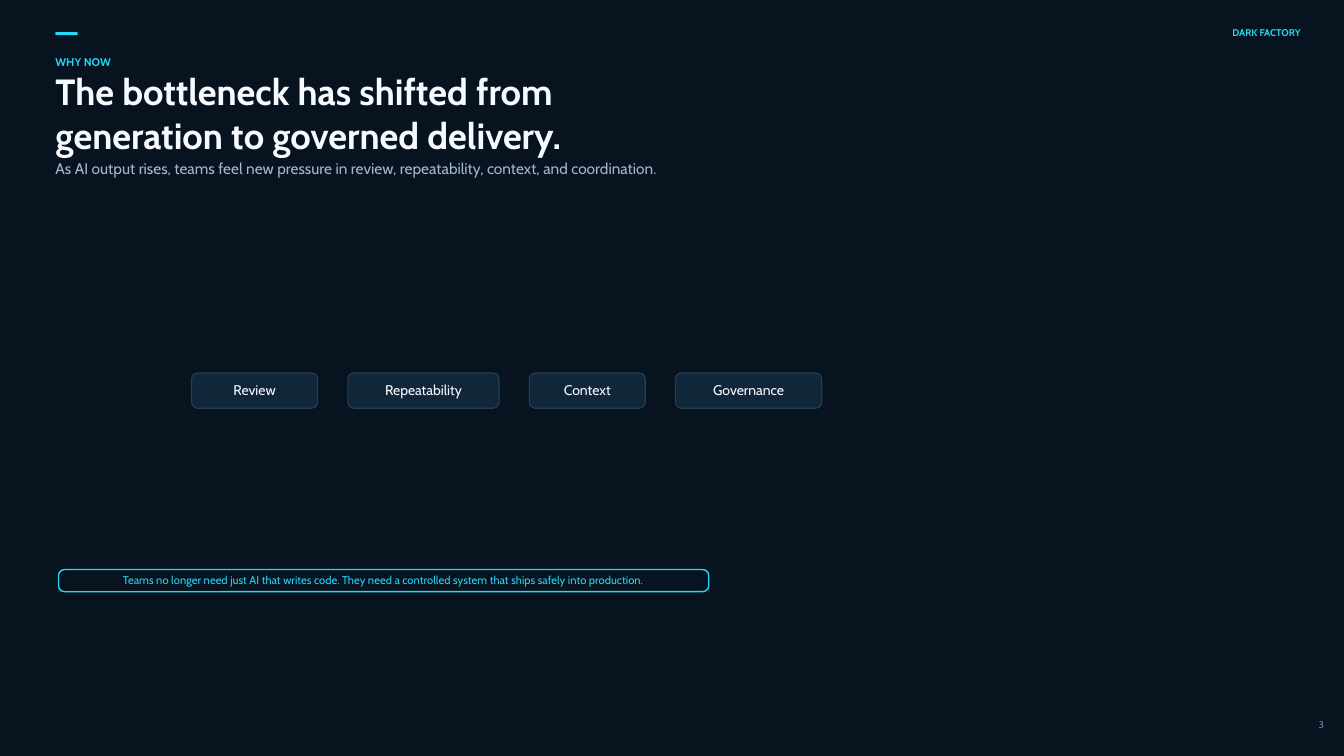
from pptx import Presentation
from pptx.dml.color import RGBColor
from pptx.enum.shapes import MSO_SHAPE
from pptx.enum.text import MSO_ANCHOR, PP_ALIGN
from pptx.util import Inches, Pt

COLORS = {
    "background": "07131F",
    "accent": "22D7F8",
    "heading": "F6FAFF",
    "body": "A3B8CC",
    "muted": "6F859A",
    "pill": "12263A",
    "pill_line": "214057",
}
FONT = "Cabin"
LEFT = 0.55

# text, (left, top, width, height), size, color, bold, alignment
TEXTS = [
    ("DARK FACTORY", (12.1, 0.25, 0.8, 0.14), 7, "accent", True, PP_ALIGN.RIGHT),
    ("3", (12.95, 7.12, 0.18, 0.14), 7, "muted", False, PP_ALIGN.RIGHT),
    ("WHY NOW", (LEFT, 0.55, 2.1, 0.14), 8, "accent", True, PP_ALIGN.LEFT),
    ("The bottleneck has shifted from generation to governed delivery.",
     (LEFT, 0.69, 6.3, 0.86), 26, "heading", True, PP_ALIGN.LEFT),
    ("As AI output rises, teams feel new pressure in review, repeatability, "
     "context, and coordination.",
     (LEFT, 1.58, 6.4, 0.18), 11, "body", False, PP_ALIGN.LEFT),
]
PRESSURES = [("Review", 1.25), ("Repeatability", 1.5), ("Context", 1.15), ("Governance", 1.45)]
PILL_LEFT, PILL_TOP, PILL_HEIGHT, PILL_GAP = 1.9, 3.7, 0.35, 0.3
TAKEAWAY = ("Teams no longer need just AI that writes code. "
            "They need a controlled system that ships safely into production.")
CORNER_RADIUS = 0.06


def color(name):
    return RGBColor.from_string(COLORS[name])


def write(shape, text, size, color_name, bold=False, alignment=PP_ALIGN.CENTER, bottom=0):
    frame = shape.text_frame
    frame.word_wrap = True
    frame.vertical_anchor = MSO_ANCHOR.MIDDLE
    frame.margin_left = frame.margin_right = frame.margin_top = 0
    frame.margin_bottom = Inches(bottom)
    paragraph = frame.paragraphs[0]
    paragraph.text = text
    paragraph.alignment = alignment
    paragraph.font.name = FONT
    paragraph.font.size = Pt(size)
    paragraph.font.bold = bold
    paragraph.font.color.rgb = color(color_name)


def add_box(slide, kind, box, fill, line=None, line_width=0):
    shape = slide.shapes.add_shape(kind, *map(Inches, box))
    shape.shadow.inherit = False
    shape.fill.solid()
    shape.fill.fore_color.rgb = color(fill)
    if line:
        shape.line.color.rgb = color(line)
        shape.line.width = Pt(line_width)
    else:
        shape.line.fill.background()
    if kind == MSO_SHAPE.ROUNDED_RECTANGLE:
        shape.adjustments[0] = CORNER_RADIUS / box[3]
    return shape


def main():
    presentation = Presentation()
    presentation.slide_width = Inches(13.33)
    presentation.slide_height = Inches(7.5)
    slide = presentation.slides.add_slide(presentation.slide_layouts[6])
    slide.background.fill.solid()
    slide.background.fill.fore_color.rgb = color("background")

    add_box(slide, MSO_SHAPE.RECTANGLE, (LEFT, 0.32, 0.22, 0.03), "accent")
    for text, box, size, color_name, bold, alignment in TEXTS:
        text_box = slide.shapes.add_textbox(*map(Inches, box))
        write(text_box, text, size, color_name, bold, alignment)

    left = PILL_LEFT
    for label, width in PRESSURES:
        pill = add_box(slide, MSO_SHAPE.ROUNDED_RECTANGLE,
                       (left, PILL_TOP, width, PILL_HEIGHT), "pill", "pill_line", 0.8)
        write(pill, label, 10, "heading", bottom=0.02)
        left += width + PILL_GAP

    takeaway = add_box(slide, MSO_SHAPE.ROUNDED_RECTANGLE,
                       (0.58, 5.65, 6.45, 0.22), "background", "accent", 1)
    write(takeaway, TAKEAWAY, 8, "accent", bottom=0.02)

    presentation.save("out.pptx")


if __name__ == "__main__":
    main()
